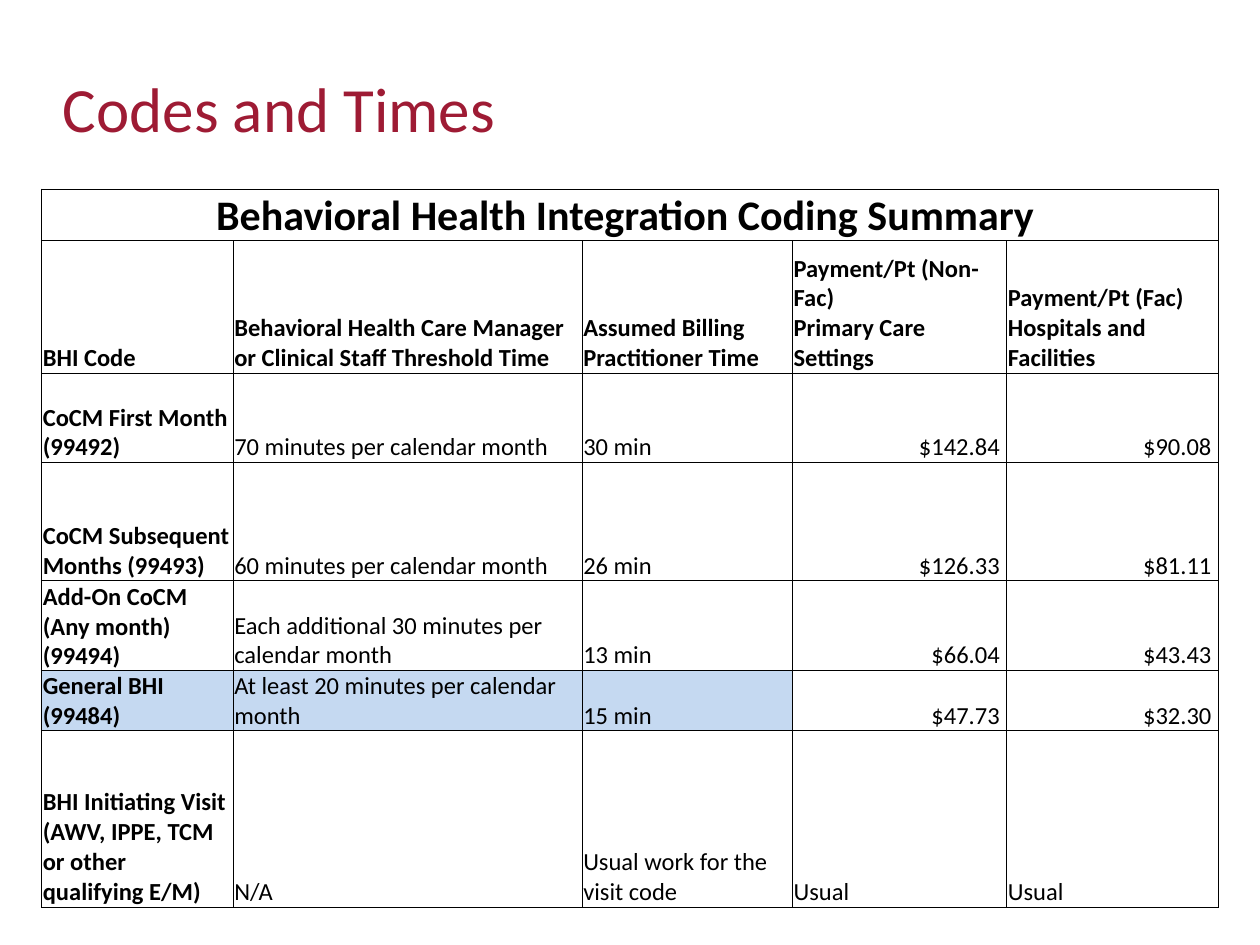
from copy import deepcopy

from lxml import etree
from pptx import Presentation
from pptx.dml.color import RGBColor
from pptx.enum.text import MSO_ANCHOR as ANCHOR, PP_ALIGN as ALIGN
from pptx.oxml.ns import qn
from pptx.util import Inches, Pt

COLORS = {"title": "9E1B34", "text": "000000", "border": "000000", "highlight": "C5D9F1"}


def write(tf, text, size=14, bold=False, color="text", align=ALIGN.LEFT):
    p = tf.paragraphs[0]
    p.text = text
    p.alignment = align
    for r in p.runs:
        r.font.name = "Calibri"
        r.font.size = Pt(size)
        r.font.bold = bold
        r.font.color.rgb = RGBColor.from_string(COLORS[color])
    # Line breaks take the same size as the text
    for br in p._p.findall(qn("a:br")):
        br.insert(0, deepcopy(p.runs[0]._r.rPr))


def add_borders(cell, width=0.5):
    tc_pr = cell._tc.get_or_add_tcPr()
    for side in ("lnL", "lnR", "lnT", "lnB"):
        ln = etree.SubElement(tc_pr, qn(f"a:{side}"), w=str(Pt(width)))
        fill = etree.SubElement(ln, qn("a:solidFill"))
        etree.SubElement(fill, qn("a:srgbClr"), val=COLORS["border"])


prs = Presentation()
prs.slide_width, prs.slide_height = Inches(10), Inches(7.5)
s = prs.slides.add_slide(prs.slide_layouts[6])

# Title
tf = s.shapes.add_textbox(Inches(0.5), Inches(0.45), Inches(9), Inches(0.8)).text_frame
tf.word_wrap = True
tf.vertical_anchor = ANCHOR.MIDDLE
tf.margin_left = tf.margin_right = tf.margin_top = tf.margin_bottom = 0
write(tf, "Codes and Times", size=36, color="title")

# Table content
rows = [
    ["Behavioral Health Integration Coding Summary ", "", "", "", ""],
    ["BHI Code", "Behavioral Health Care Manager or Clinical Staff Threshold Time",
     "Assumed Billing Practitioner Time", "Payment/Pt (Non-Fac) \nPrimary Care Settings",
     "Payment/Pt (Fac) \nHospitals and Facilities"],
    ["CoCM First Month (99492)", "70 minutes per calendar month", "30 min", "$142.84 ", "$90.08 "],
    ["CoCM Subsequent Months (99493)", "60 minutes per calendar month", "26 min",
     "$126.33 ", "$81.11 "],
    ["Add-On CoCM (Any month) (99494)", "Each additional 30 minutes per calendar month",
     "13 min", "$66.04 ", "$43.43 "],
    ["General BHI (99484)", "At least 20 minutes per calendar month", "15 min",
     "$47.73 ", "$32.30 "],
    ["BHI Initiating Visit (AWV, IPPE, TCM or other qualifying E/M)", "N/A",
     "Usual work for the visit code", "Usual", "Usual"],
]
col_widths = [1.52, 2.77, 1.67, 1.7, 1.68]
row_heights = [0.36, 1.05, 0.71, 0.94, 0.71, 0.47, 1.4]
HIGHLIGHT_ROW = 5

# Table grid
table = s.shapes.add_table(len(rows), len(col_widths), Inches(0.33), Inches(1.5),
                           Inches(9.33), Inches(5.7)).table
table.first_row = table.horz_banding = False
for col, width in zip(table.columns, col_widths):
    col.width = Inches(width)
for row, height in zip(table.rows, row_heights):
    row.height = Inches(height)
table.cell(0, 0).merge(table.cell(0, len(col_widths) - 1))

# Table cells
for i, row in enumerate(rows):
    for j, text in enumerate(row):
        cell = table.cell(i, j)
        cell.vertical_anchor = ANCHOR.BOTTOM
        cell.margin_left = cell.margin_right = cell.margin_top = Inches(0.01)
        cell.margin_bottom = 0
        add_borders(cell)
        if i == HIGHLIGHT_ROW and j < 3:
            cell.fill.solid()
            cell.fill.fore_color.rgb = RGBColor.from_string(COLORS["highlight"])
        else:
            cell.fill.background()
        if i == 0:
            align = ALIGN.CENTER
        else:
            align = ALIGN.RIGHT if text.startswith("$") else ALIGN.LEFT
        write(cell.text_frame, text, size=24 if i == 0 else 14,
              bold=i < 2 or j == 0, align=align)

prs.save("out.pptx")
